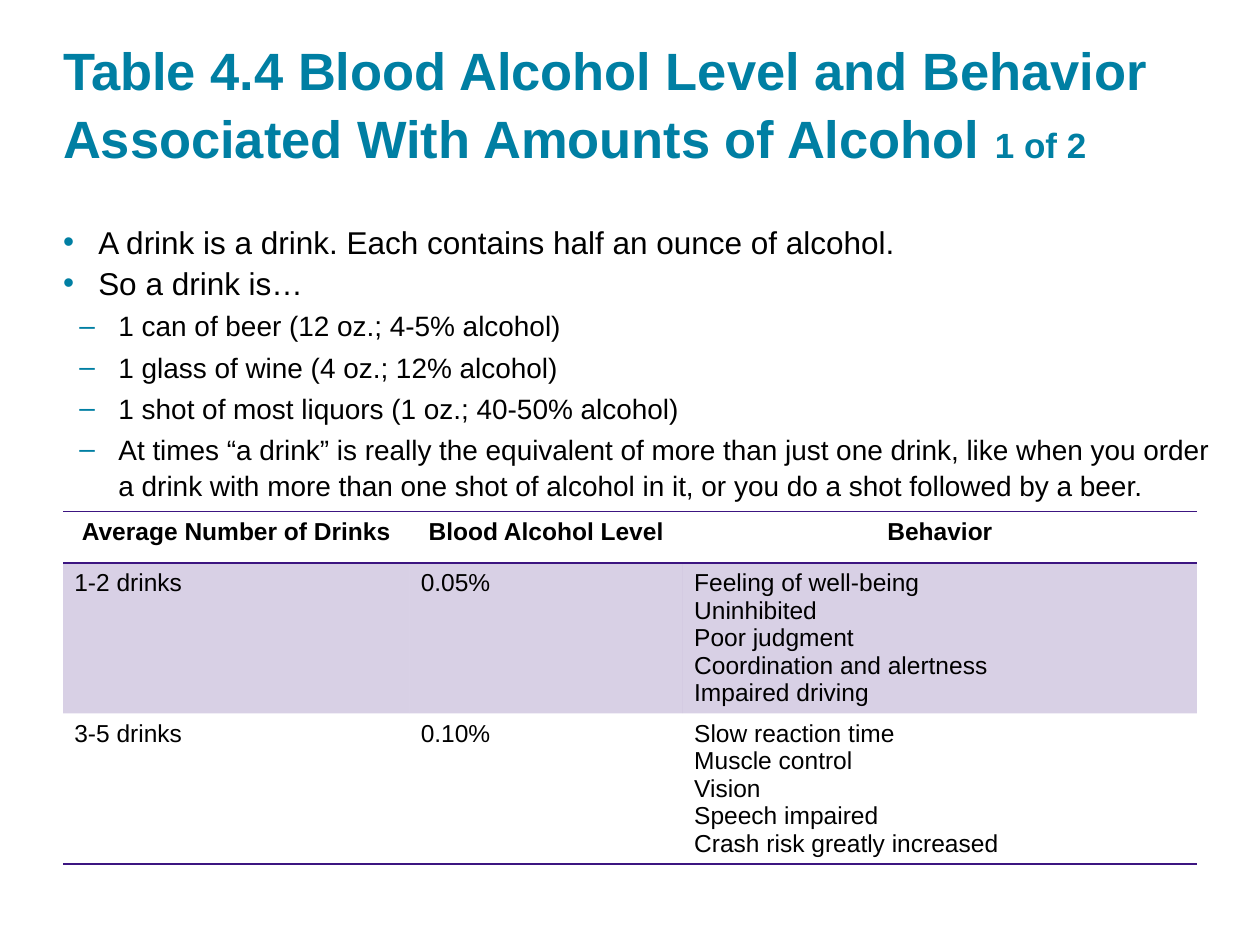
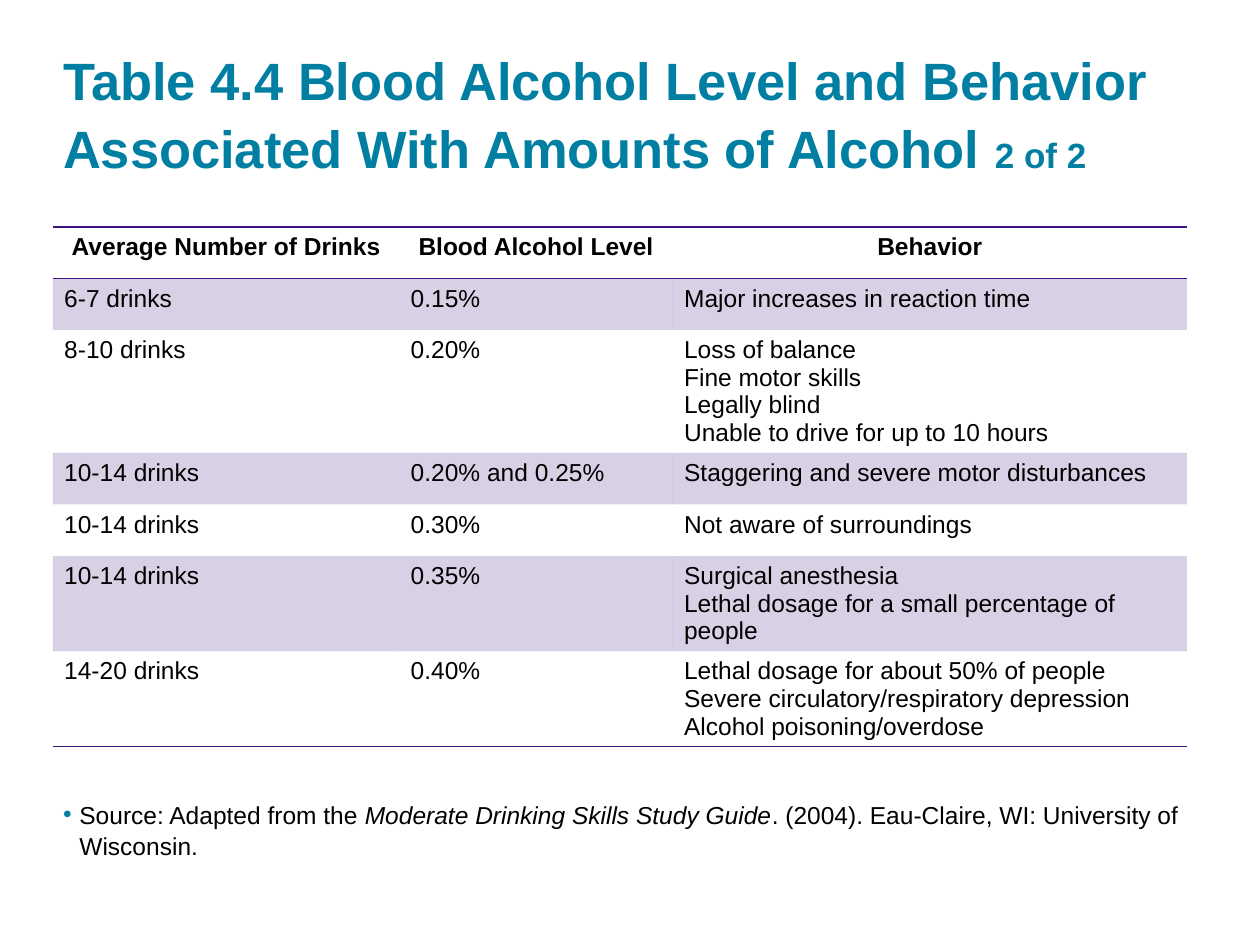
from lxml import etree
from pptx import Presentation
from pptx.dml.color import RGBColor
from pptx.enum.text import MSO_ANCHOR, MSO_AUTO_SIZE, PP_ALIGN
from pptx.oxml.ns import qn
from pptx.util import Inches, Pt

LEFT, CENTER = PP_ALIGN.LEFT, PP_ALIGN.CENTER
TOP, BOTTOM = MSO_ANCHOR.TOP, MSO_ANCHOR.BOTTOM
NO_FIT = MSO_AUTO_SIZE.NONE

COLORS = {"accent": "007FA3", "text": "000000", "table": "3C1581"}
FONT = "Arial"
LINE_SPACING = 1.07
BAND_OPACITY = 20
NO_TABLE_STYLE = "{2D5ABB26-0587-4C30-8999-92F81FD0307C}"
COLUMN_WIDTHS = (2.75, 2.17, 4.08)
ROW_HEIGHT = 0.41

TITLE = "Table 4.4 Blood Alcohol Level and Behavior Associated With Amounts of Alcohol "
HEADINGS = ("Average Number of Drinks", "Blood Alcohol Level", "Behavior")

# Paragraph styles: outline level, bullet, indent in inches, size and space before in points
STYLES = {
    "point": dict(level=0, bullet="•", indent=0.28, size=18, before=0),
    "detail": dict(level=1, bullet="–", indent=0.31, size=16, before=3),
    "source": dict(level=0, bullet="•", indent=0.13, size=14, before=0),
}
LEFT_MARGINS = {"point": 0.28, "detail": 0.44, "source": 0.13}

# Each body paragraph is a style and its spans of (text, italic)
SLIDES = [
    {
        "part": "1 of 2",
        "title_at": (0.5, 0.24, 9, 1.1),
        "body_at": (0.5, 1.75, 9.25, 2.37),
        "body": [
            ("point", [("A drink is a drink. Each contains half an ounce of alcohol.", False)]),
            ("point", [("So a drink is…", False)]),
            ("detail", [("1 can of beer (12 oz.; 4-5% alcohol)", False)]),
            ("detail", [("1 glass of wine (4 oz.; 12% alcohol)", False)]),
            ("detail", [("1 shot of most liquors (1 oz.; 40-50% alcohol)", False)]),
            ("detail", [("At times “a drink” is really the equivalent of more than just "
                         "one drink, like when you order a drink with more than one shot "
                         "of alcohol in it, or you do a shot followed by a beer.", False)]),
        ],
        "table_at": (0.5, 4.06),
        "rows": [
            ("1-2 drinks", "0.05%", ["Feeling of well-being", "Uninhibited", "Poor judgment",
                                     "Coordination and alertness", "Impaired driving"]),
            ("3-5 drinks", "0.10%", ["Slow reaction time", "Muscle control", "Vision",
                                     "Speech impaired", "Crash risk greatly increased"]),
        ],
    },
    {
        "part": "2 of 2",
        "title_at": (0.5, 0.24, 9, 1.18),
        "body_at": (0.5, 6.33, 9, 0.37),
        "body": [
            ("source", [("Source: Adapted from the ", False),
                        ("Moderate Drinking Skills Study Guide", True),
                        (". (2004). Eau-Claire, WI: University of Wisconsin.", False)]),
        ],
        "table_at": (0.42, 1.8),
        "rows": [
            ("6-7 drinks", "0.15%", ["Major increases in reaction time"]),
            ("8-10 drinks", "0.20%", ["Loss of balance", "Fine motor skills", "Legally blind",
                                      "Unable to drive for up to 10 hours"]),
            ("10-14 drinks", "0.20% and 0.25%", ["Staggering and severe motor disturbances"]),
            ("10-14 drinks", "0.30%", ["Not aware of surroundings"]),
            ("10-14 drinks", "0.35%", ["Surgical anesthesia",
                                       "Lethal dosage for a small percentage of people"]),
            ("14-20 drinks", "0.40%", ["Lethal dosage for about 50% of people",
                                       "Severe circulatory/respiratory depression",
                                       "Alcohol poisoning/overdose"]),
        ],
    },
]


def set_values(target, values):
    for name, value in values.items():
        setattr(target, name, value)


def add_span(para, text, color="text", **font_values):
    span = para.add_run()
    span.text = text
    set_values(span.font, {"name": FONT, **font_values})
    span.font.color.rgb = RGBColor.from_string(COLORS[color])


def place(box, at, anchor):
    for name, length in zip(("left", "top", "width", "height"), at):
        setattr(box, name, Inches(length))
    set_values(box.text_frame, dict(
        margin_left=0, margin_top=0, margin_right=0, margin_bottom=0,
        word_wrap=True, auto_size=NO_FIT, vertical_anchor=anchor))


def next_paragraph(frame, index):
    return frame.paragraphs[0] if index == 0 else frame.add_paragraph()


def set_bullet(para, bullet, margin, indent):
    properties = para._p.get_or_add_pPr()
    properties.set("marL", str(Inches(margin)))
    properties.set("indent", str(-Inches(indent)))
    color = etree.SubElement(properties, qn("a:buClr"))
    etree.SubElement(color, qn("a:srgbClr"), val=COLORS["accent"])
    etree.SubElement(properties, qn("a:buFont"), typeface=FONT)
    etree.SubElement(properties, qn("a:buChar"), char=bullet)


def fill_title(title, part, at):
    place(title, at, BOTTOM)
    para = title.text_frame.paragraphs[0]
    set_values(para, dict(alignment=LEFT, line_spacing=LINE_SPACING))
    for text, size in ((TITLE, 30), (part, 20)):
        add_span(para, text, "accent", size=Pt(size), bold=True)


def fill_body(body, paragraphs, at):
    place(body, at, TOP)
    for index, (style_name, spans) in enumerate(paragraphs):
        style = STYLES[style_name]
        para = next_paragraph(body.text_frame, index)
        set_bullet(para, style["bullet"], LEFT_MARGINS[style_name], style["indent"])
        set_values(para, dict(level=style["level"], alignment=LEFT,
                              line_spacing=LINE_SPACING, space_before=Pt(style["before"])))
        for text, italic in spans:
            add_span(para, text, size=Pt(style["size"]), italic=italic)


def add_border(cell, side):
    line = etree.SubElement(cell._tc.get_or_add_tcPr(), qn("a:ln" + side), w=str(Pt(1)))
    fill = etree.SubElement(line, qn("a:solidFill"))
    etree.SubElement(fill, qn("a:srgbClr"), val=COLORS["table"])


def fill_band(cell):
    cell.fill.solid()
    cell.fill.fore_color.rgb = RGBColor.from_string(COLORS["table"])
    color = cell._tc.tcPr.find(".//" + qn("a:solidFill") + "[last()]/" + qn("a:srgbClr"))
    etree.SubElement(color, qn("a:alpha"), val=str(BAND_OPACITY * 1000))


def fill_cell(cell, lines, heading):
    set_values(cell, dict(margin_left=Inches(0.09), margin_right=Inches(0.09),
                          margin_top=Inches(0.05), margin_bottom=Inches(0.05)))
    for index, text in enumerate(lines):
        para = next_paragraph(cell.text_frame, index)
        para.alignment = CENTER if heading else LEFT
        add_span(para, text, size=Pt(14), bold=heading)


def add_behavior_table(slide, rows, at):
    left, top = at
    frame = slide.shapes.add_table(
        len(rows) + 1, len(HEADINGS), Inches(left), Inches(top),
        Inches(sum(COLUMN_WIDTHS)), Inches(ROW_HEIGHT * (len(rows) + 1)))
    table = frame.table
    table._tbl.tblPr.find(qn("a:tableStyleId")).text = NO_TABLE_STYLE
    for column, width in zip(table.columns, COLUMN_WIDTHS):
        column.width = Inches(width)
    for row_index, values in enumerate([HEADINGS, *rows]):
        heading = row_index == 0
        table.rows[row_index].height = Inches(ROW_HEIGHT)
        for column_index, value in enumerate(values):
            cell = table.cell(row_index, column_index)
            fill_cell(cell, [value] if isinstance(value, str) else value, heading)
            if heading:
                add_border(cell, "T")
            if heading or row_index == len(rows):
                add_border(cell, "B")
            if row_index % 2:
                fill_band(cell)
            else:
                cell.fill.background()


def main():
    deck = Presentation()
    deck.slide_width, deck.slide_height = Inches(10), Inches(7.5)
    for content in SLIDES:
        page = deck.slides.add_slide(deck.slide_layouts[1])
        fill_title(page.shapes.title, content["part"], content["title_at"])
        fill_body(page.placeholders[1], content["body"], content["body_at"])
        add_behavior_table(page, content["rows"], content["table_at"])
    deck.save("out.pptx")


if __name__ == "__main__":
    main()
